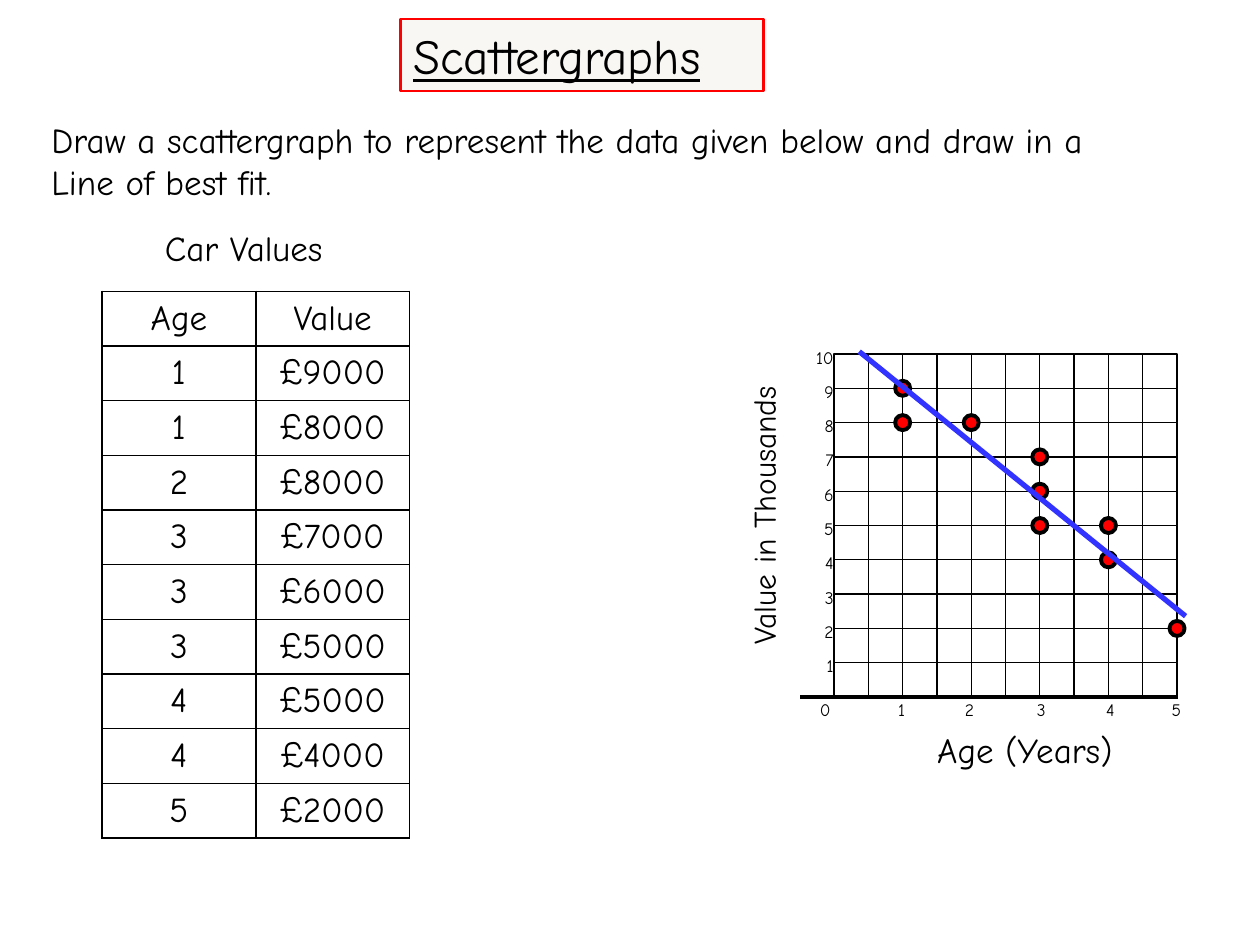
from lxml.etree import SubElement
from pptx import Presentation
from pptx.dml.color import RGBColor
from pptx.enum.shapes import MSO_CONNECTOR, MSO_SHAPE
from pptx.enum.text import MSO_ANCHOR, PP_ALIGN
from pptx.oxml import parse_xml
from pptx.oxml.ns import nsdecls, qn
from pptx.util import Pt

FONT = "Comic Neue"
rgb = RGBColor.from_string


def write(tf, text, size, align=PP_ALIGN.LEFT):
    tf.text = text
    for p in tf.paragraphs:
        p.alignment = align
        p.font.name = FONT
        p.font.size = Pt(size)
        p.font.color.rgb = rgb("000000")


def add_text(text, x, y, w, h, size, align=PP_ALIGN.LEFT):
    sp = slide.shapes.add_textbox(Pt(x), Pt(y), Pt(w), Pt(h))
    sp.text_frame.word_wrap = True
    write(sp.text_frame, text, size, align)
    return sp


prs = Presentation()
prs.slide_width, prs.slide_height = Pt(720), Pt(540)
slide = prs.slides.add_slide(prs.slide_layouts[5])

title = slide.shapes.title
title.left, title.top, title.width, title.height = Pt(229), Pt(10.8), Pt(207.4), Pt(41.2)
title.fill.solid()
title.fill.fore_color.rgb = rgb("F8F7F3")
title.line.color.rgb = rgb("FF0000")
title.line.width = Pt(1.5)
title.text_frame.vertical_anchor = MSO_ANCHOR.TOP
write(title.text_frame, "Scattergraphs", 28)
title.text_frame.paragraphs[0].font.underline = True

add_text("Draw a scattergraph to represent the data given below and draw in a\n"
         "Line of best fit.", 22.3, 64.1, 687.6, 55.4, 20)
add_text("Car Values", 87.1, 126, 113, 31.7, 20)

cars = [(1, 9), (1, 8), (2, 8), (3, 7), (3, 6), (3, 5), (4, 5), (4, 4), (5, 2)]
rows = [("Age", "Value")] + [(str(age), f"£{value}000") for age, value in cars]
table = slide.shapes.add_table(len(rows), 2, Pt(58.3), Pt(166.5), Pt(175.7), Pt(292.5)).table
table.first_row = False
table.horz_banding = False
for i, row in enumerate(rows):
    for j, text in enumerate(row):
        cell = table.cell(i, j)
        write(cell.text_frame, text, 20, PP_ALIGN.CENTER)
        cell.vertical_anchor = MSO_ANCHOR.MIDDLE
        tcPr = cell._tc.get_or_add_tcPr()
        for side in ("lnL", "lnR", "lnT", "lnB"):
            tcPr.append(parse_xml(
                f'<a:{side} {nsdecls("a")} w="12700"><a:solidFill>'
                f'<a:srgbClr val="000000"/></a:solidFill></a:{side}>'))
        cell.fill.background()

step = 19.6
left, top = 476.6, 202.3
bottom = top + 10 * step
for i in range(10):
    for j in range(10):
        sp = slide.shapes.add_shape(MSO_SHAPE.RECTANGLE, Pt(left + j * step),
                                    Pt(top + i * step), Pt(step), Pt(step))
        sp.shadow.inherit = False
        sp.fill.background()
        sp.line.color.rgb = rgb("000000")
        sp.line.width = Pt(0.75)

for value, x in enumerate([461.5, 506.2, 544.3, 585.4, 625, 662.4]):
    add_text(str(value), x, 396, 28, step, 10)
for value in range(1, 11):
    add_text(str(value), 440, 390.5 - value * step, 43.4, step, 10, PP_ALIGN.RIGHT)
y_title = add_text("Value in Thousands", 339.1, 280.1, 194.4, 28.8, 18, PP_ALIGN.CENTER)
y_title.rotation = 270
add_text("Age (Years)", 511.2, 412.6, 149, 31.7, 20, PP_ALIGN.CENTER)

dot = 8.6
for age, value in cars:
    sp = slide.shapes.add_shape(MSO_SHAPE.OVAL, Pt(left + 2 * age * step - dot / 2),
                                Pt(bottom - value * step - dot / 2), Pt(dot), Pt(dot))
    sp.shadow.inherit = False
    sp.fill.solid()
    sp.fill.fore_color.rgb = rgb("FF0000")
    sp.line.color.rgb = rgb("000000")
    sp.line.width = Pt(2.25)

axis = (457.2, bottom, 673.2, bottom, "000000", 2.25)
best_fit = (677.5, 352.1, 491, 200.9, "3333FF", 3)
for x1, y1, x2, y2, color, width in (axis, best_fit):
    line = slide.shapes.add_connector(MSO_CONNECTOR.STRAIGHT, Pt(x1), Pt(y1), Pt(x2), Pt(y2))
    line.line.color.rgb = rgb(color)
    line.line.width = Pt(width)
    SubElement(line._element.spPr, qn("a:effectLst"))

prs.save("out.pptx")
